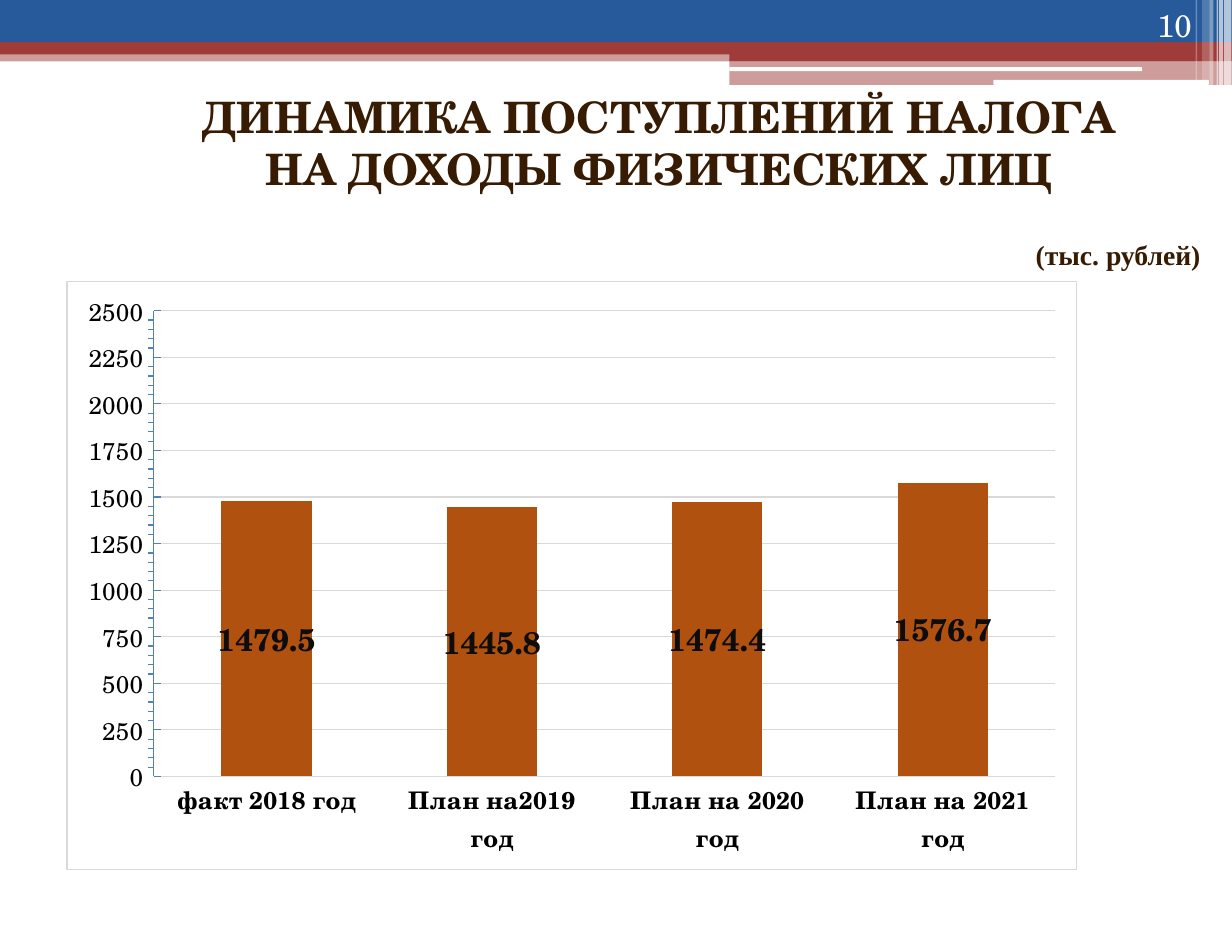
from dataclasses import dataclass

import pptx
import pptx.chart.data
import pptx.dml.color
import pptx.enum.chart
import pptx.enum.shapes
import pptx.enum.text
import pptx.oxml
import pptx.oxml.ns
import pptx.util
from pptx.util import Cm

HUES = {
    "blue": "265A9A", "red": "9F3B38", "white": "FFFFFF", "brown": "371B03",
    "black": "000000", "ink": "0D0D0D", "bar": "B1510F", "grid": "D9D9D9",
    "axis": "4F81BD",
}
SERIF = "TeX Gyre Schola"
WIDE = 25.1
SALES = {
    "факт 2018 год": 1479.5,
    "План на2019 год": 1445.8,
    "План на 2020 год": 1474.4,
    "План на 2021 год": 1576.7,
}


@dataclass
class Band:
    left: float
    top: float
    width: float
    height: float
    hue: str
    alpha: int = 100
    round: bool = False


BANDS = [
    Band(0, 1.02, WIDE, 0.23, "red", 50),
    Band(0, 0, WIDE, 0.86, "blue"),
    Band(0, 0.86, WIDE, 0.25, "red"),
    Band(14.86, 0.99, 10.24, 0.25, "red"),
    Band(14.86, 1.22, 10.24, 0.51, "red", 50),
    Band(14.86, 1.37, 8.41, 0.08, "white", round=True),
    Band(20.24, 1.63, 4.39, 0.1, "white", round=True),
    Band(24.94, 0, 0.15, 1.73, "white", 65),
    Band(24.84, 0, 0.08, 1.73, "white", 65),
    Band(24.79, 0, 0.03, 1.73, "white", 60),
    Band(24.64, 0, 0.08, 1.73, "white", 40),
    Band(24.49, 0, 0.15, 1.63, "white", 20),
    Band(24.36, 0, 0.03, 1.63, "white", 30),
]


def tint(name: str) -> pptx.dml.color.RGBColor:
    return pptx.dml.color.RGBColor.from_string(HUES[name])


def style(font, size: float, hue: str, bold: bool = False, face: str = SERIF) -> None:
    font.size = pptx.util.Pt(size)
    font.name = face
    font.bold = bold
    font.color.rgb = tint(hue)


def rule(line, hue: str) -> None:
    line.color.rgb = tint(hue)
    line.width = pptx.util.Pt(0.75)


def draw_band(slide, band: Band) -> None:
    kinds = pptx.enum.shapes.MSO_SHAPE
    kind = kinds.ROUNDED_RECTANGLE if band.round else kinds.RECTANGLE
    shape = slide.shapes.add_shape(
        kind, Cm(band.left), Cm(band.top), Cm(band.width), Cm(band.height))
    shape.shadow.inherit = False
    shape.line.fill.background()
    shape.fill.solid()
    shape.fill.fore_color.rgb = tint(band.hue)
    if band.alpha < 100:
        color = shape.fill._xPr.find(".//" + pptx.oxml.ns.qn("a:srgbClr"))
        alpha = color.makeelement(pptx.oxml.ns.qn("a:alpha"), {"val": str(band.alpha * 1000)})
        color.append(alpha)


def add_text(slide, text: str, *, left: float, top: float, width: float, height: float,
             size: float, hue: str, bold: bool = False, face: str = SERIF,
             align: str = "LEFT", anchor: str = "TOP", wrap: bool = True) -> None:
    box = slide.shapes.add_textbox(Cm(left), Cm(top), Cm(width), Cm(height))
    frame = box.text_frame
    frame.word_wrap = wrap
    frame.vertical_anchor = pptx.enum.text.MSO_ANCHOR[anchor]
    par = frame.paragraphs[0]
    par.alignment = pptx.enum.text.PP_ALIGN[align]
    run = par.add_run()
    run.text = text
    style(run.font, size, hue, bold, face)


def frame_chart(chart) -> None:
    space = pptx.oxml.ns.nsdecls("c", "a")
    edge = pptx.oxml.parse_xml(
        f'<c:spPr {space}><a:noFill/><a:ln w="9525"><a:solidFill>'
        f'<a:srgbClr val="{HUES["grid"]}"/></a:solidFill></a:ln></c:spPr>')
    chart.element.find(pptx.oxml.ns.qn("c:chart")).addnext(edge)
    plot = chart.element.find(".//" + pptx.oxml.ns.qn("c:plotArea"))
    for old in plot.findall(pptx.oxml.ns.qn("c:layout")):
        plot.remove(old)
    spots = {"x": 0.086, "y": 0.05, "w": 0.893, "h": 0.792}
    parts = "".join(f'<c:{key}Mode val="edge"/>' for key in "xy")
    parts += "".join(f'<c:{key} val="{val}"/>' for key, val in spots.items())
    plot.insert(0, pptx.oxml.parse_xml(
        f'<c:layout {space}><c:manualLayout><c:layoutTarget val="inner"/>'
        f'{parts}</c:manualLayout></c:layout>'))


def add_sales(slide) -> None:
    enums = pptx.enum.chart
    data = pptx.chart.data.CategoryChartData()
    data.categories = list(SALES)
    data.add_series("Series 1", list(SALES.values()))
    chart = slide.shapes.add_chart(
        enums.XL_CHART_TYPE.COLUMN_STACKED,
        Cm(1.35), Cm(5.72), Cm(20.6), Cm(12.01), data).chart
    chart.has_legend = False
    chart.has_title = False
    style(chart.font, 10, "black")

    plot = chart.plots[0]
    plot.gap_width = 150
    plot.overlap = 100
    plot.vary_by_categories = False
    bars = plot.series[0]
    bars.format.fill.solid()
    bars.format.fill.fore_color.rgb = tint("bar")
    labels = bars.data_labels
    labels.show_value = True
    labels.position = enums.XL_LABEL_POSITION.CENTER
    style(labels.font, 18, "ink", True)

    years = chart.category_axis
    years.major_tick_mark = enums.XL_TICK_MARK.NONE
    years.format.line.fill.background()
    style(years.tick_labels.font, 14, "black", True)

    scale = chart.value_axis
    scale.minimum_scale = 0
    scale.maximum_scale = 2500
    scale.major_unit = 250
    scale.minor_unit = 50
    scale.major_tick_mark = enums.XL_TICK_MARK.INSIDE
    scale.minor_tick_mark = enums.XL_TICK_MARK.OUTSIDE
    scale.has_major_gridlines = True
    rule(scale.major_gridlines.format.line, "grid")
    rule(scale.format.line, "axis")
    style(scale.tick_labels.font, 14, "black")
    frame_chart(chart)


def main() -> None:
    deck = pptx.Presentation()
    deck.slide_width = Cm(WIDE)
    deck.slide_height = Cm(19.05)
    slide = deck.slides.add_slide(deck.slide_layouts[6])
    for band in BANDS:
        draw_band(slide, band)
    add_text(slide, "ДИНАМИКА ПОСТУПЛЕНИЙ НАЛОГА НА ДОХОДЫ ФИЗИЧЕСКИХ ЛИЦ",
             left=3.38, top=1.02, width=20.09, height=3.76, size=25, hue="brown",
             bold=True, align="CENTER", anchor="MIDDLE")
    add_text(slide, "10", left=22.45, top=0, width=2.08, height=1.02, size=18,
             hue="white", align="RIGHT", anchor="BOTTOM")
    add_text(slide, "(тыс. рублей)", left=20.85, top=4.72, width=3.91, height=0.94,
             size=16, hue="brown", bold=True, face="Times New Roman", wrap=False)
    add_sales(slide)
    deck.save("out.pptx")


if __name__ == "__main__":
    main()
